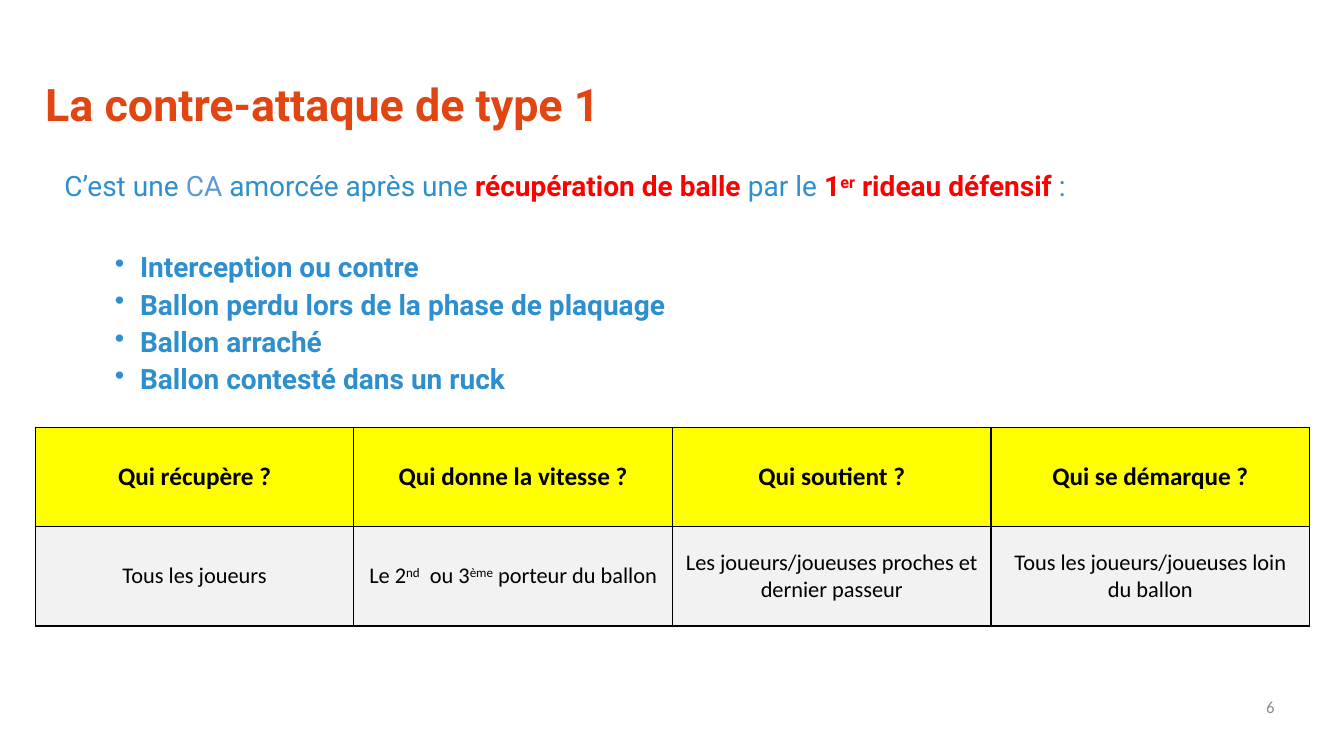
from pptx import Presentation
from pptx.util import Inches, Pt
from pptx.dml.color import RGBColor
from pptx.enum.text import PP_ALIGN as AL, MSO_ANCHOR as ANC
from pptx.oxml.ns import qn
from lxml.etree import SubElement

ORANGE = RGBColor(0xE0, 0x45, 0x12)
BLUE = RGBColor(0x2E, 0x8F, 0xCE)
PALE_BLUE = RGBColor(0x5B, 0x9B, 0xD5)
RED = RGBColor(0xFF, 0x00, 0x00)
BLACK = RGBColor(0x00, 0x00, 0x00)
GREY = RGBColor(0x8C, 0x8C, 0x8C)
YELLOW = RGBColor(0xFF, 0xFF, 0x00)
LIGHT = RGBColor(0xF2, 0xF2, 0xF2)

prs = Presentation()
prs.slide_width, prs.slide_height = Inches(13.33), Inches(7.5)
s = prs.slides.add_slide(prs.slide_layouts[6])


def add_box(x, y, w, h, anchor):
    tf = s.shapes.add_textbox(Inches(x), Inches(y), Inches(w), Inches(h)).text_frame
    tf.word_wrap = True
    tf.vertical_anchor = anchor
    return tf


def add_run(p, text, font, size, color, bold=False, raised=False):
    r = p.add_run()
    r.text = text
    r.font.name, r.font.size, r.font.bold = font, Pt(size), bold
    r.font.color.rgb = color
    if raised:
        r._r.get_or_add_rPr().set("baseline", "30000")


# Title
p = add_box(0.35, 0.66, 13.06, 0.81, ANC.MIDDLE).paragraphs[0]
p.line_spacing = 0.9
add_run(p, "La contre-attaque de type 1", "Roboto", 32, ORANGE, True)

# Slide number
p = add_box(9.74, 6.81, 3, 0.4, ANC.MIDDLE).paragraphs[0]
p.alignment = AL.RIGHT
add_run(p, "6", "Calibri", 12, GREY)

# Definition
tf = add_box(0.54, 1.66, 11.62, 2.5, ANC.TOP)
p = tf.paragraphs[0]
p.line_spacing = 0.9
for text, color, bold, raised in [
    ("C’est une ", BLUE, False, False),
    ("CA", PALE_BLUE, False, False),
    (" amorcée après une ", BLUE, False, False),
    ("récupération de balle ", RED, True, False),
    ("par le ", BLUE, False, False),
    ("1", RED, True, False),
    ("er", RED, True, True),
    (" rideau défensif ", RED, True, False),
    (":", BLUE, False, False),
]:
    add_run(p, text, "Roboto", 20, color, bold, raised)

# Bulleted situations, the first set apart from the definition
situations = [
    "Interception ou contre",
    "Ballon perdu lors de la phase de plaquage",
    "Ballon arraché",
    "Ballon contesté dans un ruck",
]
for i, text in enumerate(situations):
    p = tf.add_paragraph()
    p.level = 1
    p.alignment = AL.JUSTIFY
    p.line_spacing = 0.9
    p.space_before = Pt(5 if i else 36.5)
    pPr = p._p.get_or_add_pPr()
    pPr.set("marL", str(Inches(0.75)))
    pPr.set("indent", str(Inches(-0.25)))
    SubElement(pPr, qn("a:buChar"), char="•")
    add_run(p, text, "Roboto", 20, BLUE, True)

# Table of roles: each cell is a list of (text, raised) runs
roles = [
    [[("Qui récupère ?", False)], [("Qui donne la vitesse ?", False)],
     [("Qui soutient ?", False)], [("Qui se démarque ?", False)]],
    [[("Tous les joueurs", False)],
     [("Le 2", False), ("nd", True), ("  ou 3", False), ("ème", True),
      (" porteur du ballon", False)],
     [("Les joueurs/joueuses proches et dernier passeur", False)],
     [("Tous les joueurs/joueuses loin du ballon", False)]],
]
table = s.shapes.add_table(2, 4, Inches(0.35), Inches(4.24),
                           Inches(12.64), Inches(1.97)).table
for i, row in enumerate(roles):
    header = i == 0
    for j, runs in enumerate(row):
        cell = table.cell(i, j)
        cell.vertical_anchor = ANC.MIDDLE
        tcPr = cell._tc.get_or_add_tcPr()
        for side in ("lnL", "lnR", "lnT", "lnB"):
            ln = SubElement(tcPr, qn("a:" + side), w=str(Pt(1)))
            fill = SubElement(ln, qn("a:solidFill"))
            SubElement(fill, qn("a:srgbClr"), val=str(BLACK))
        cell.fill.solid()
        cell.fill.fore_color.rgb = YELLOW if header else LIGHT
        p = cell.text_frame.paragraphs[0]
        p.alignment = AL.CENTER
        for text, raised in runs:
            add_run(p, text, "Calibri", 18 if header else 16, BLACK, header, raised)

prs.save("out.pptx")
